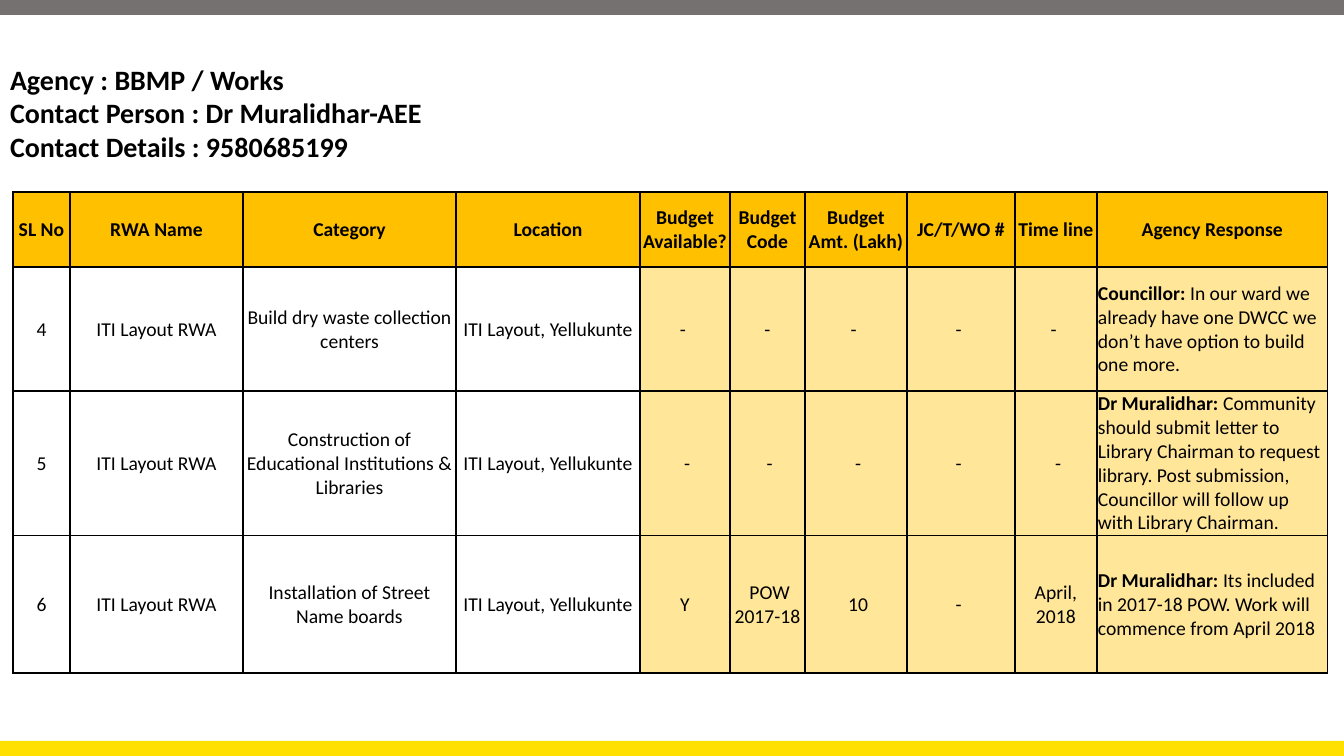
"""Build the slide listing ward works requests and the agency's responses."""
from lxml import etree
from pptx import Presentation
from pptx import util as u
from pptx.dml.color import RGBColor
from pptx.enum import shapes, text
from pptx.oxml.ns import qn

PX = 9071


def px(n):
    return u.Emu(n * PX)


def paint(fill, color):
    fill.solid()
    fill.fore_color.rgb = RGBColor.from_string(color)


prs = Presentation()
prs.slide_width, prs.slide_height = px(1344), px(756)
s = prs.slides.add_slide(prs.slide_layouts[5])

for top, color in ((741, "FFE000"), (0, "767171")):
    sp = s.shapes.add_shape(shapes.MSO_SHAPE.RECTANGLE, 0, px(top), px(1344), px(15))
    sp.shadow.inherit = False
    paint(sp.fill, color)
    sp.line.fill.background()

title = s.shapes.title
title.left, title.top, title.width, title.height = px(0), px(57), px(1344), px(110)
tf = title.text_frame
tf.auto_size = text.MSO_AUTO_SIZE.NONE
tf.vertical_anchor = text.MSO_ANCHOR.TOP
tf.margin_left = tf.margin_right = px(10)
tf.margin_top = tf.margin_bottom = px(5)
tf.text = "Agency : BBMP / Works\nContact Person : Dr Muralidhar-AEE\nContact Details : 9580685199"
for p in tf.paragraphs:
    p.alignment = text.PP_ALIGN.LEFT
    p.font.name, p.font.size, p.font.bold = "Calibri", u.Pt(20), True
    paint(p.font.fill, "000000")

col_widths = [57, 173, 213, 184, 90, 75, 102, 108, 82, 231]
row_heights = [75, 124, 144, 138]
rows = [
    ["SL No", "RWA Name", "Category", "Location", "Budget Available?", "Budget Code",
     "Budget Amt. (Lakh)", "JC/T/WO #", "Time line", "Agency Response"],
    ["4", "ITI Layout RWA", "Build dry waste collection centers", "ITI Layout, Yellukunte",
     "- ", "-", "- ", "- ", "- ",
     ("Councillor:", " In our ward we already have one DWCC we don’t have option to build one more.")],
    ["5", "ITI Layout RWA", "Construction of Educational Institutions & Libraries",
     "ITI Layout, Yellukunte", " -", " -", " -", "- ", " -",
     ("Dr Muralidhar: ", "Community should submit letter to Library Chairman to request library. "
      "Post submission, Councillor will follow up with Library Chairman.")],
    ["6", "ITI Layout RWA", "Installation of Street Name boards", "ITI Layout, Yellukunte",
     "Y", " POW\n2017-18", " 10", "- ", "April, 2018",
     ("Dr Muralidhar: ", "Its included in 2017-18 POW. Work will commence from April 2018")],
]
table = s.shapes.add_table(len(rows), len(col_widths), px(13), px(192),
                           px(sum(col_widths)), px(sum(row_heights))).table
table.horz_banding = False
for col, width in zip(table.columns, col_widths):
    col.width = px(width)
for row, height in zip(table.rows, row_heights):
    row.height = px(height)

for i, values in enumerate(rows):
    for j, value in enumerate(values):
        cell = table.cell(i, j)
        cell.vertical_anchor = text.MSO_ANCHOR.MIDDLE
        cell.margin_left = cell.margin_right = cell.margin_top = px(1)
        cell.margin_bottom = 0
        is_response = isinstance(value, tuple)
        if is_response:
            p = cell.text_frame.paragraphs[0]
            for part, bold in zip(value, (True, False)):
                r = p.add_run()
                r.text, r.font.bold = part, bold
        else:
            cell.text = value
        for p in cell.text_frame.paragraphs:
            p.alignment = text.PP_ALIGN.LEFT if is_response else text.PP_ALIGN.CENTER
            p.font.name, p.font.size, p.font.bold = "Calibri", u.Pt(14), i == 0
            paint(p.font.fill, "000000")
        for side in ("lnL", "lnR", "lnT", "lnB"):
            ln = etree.SubElement(cell._tc.get_or_add_tcPr(), qn(f"a:{side}"), w=str(u.Pt(1)))
            line_fill = etree.SubElement(ln, qn("a:solidFill"))
            etree.SubElement(line_fill, qn("a:srgbClr"), val="000000")
        if i == 0:
            paint(cell.fill, "FFC000")
        elif j > 3:
            paint(cell.fill, "FFE699")
        else:
            cell.fill.background()

prs.save("out.pptx")
